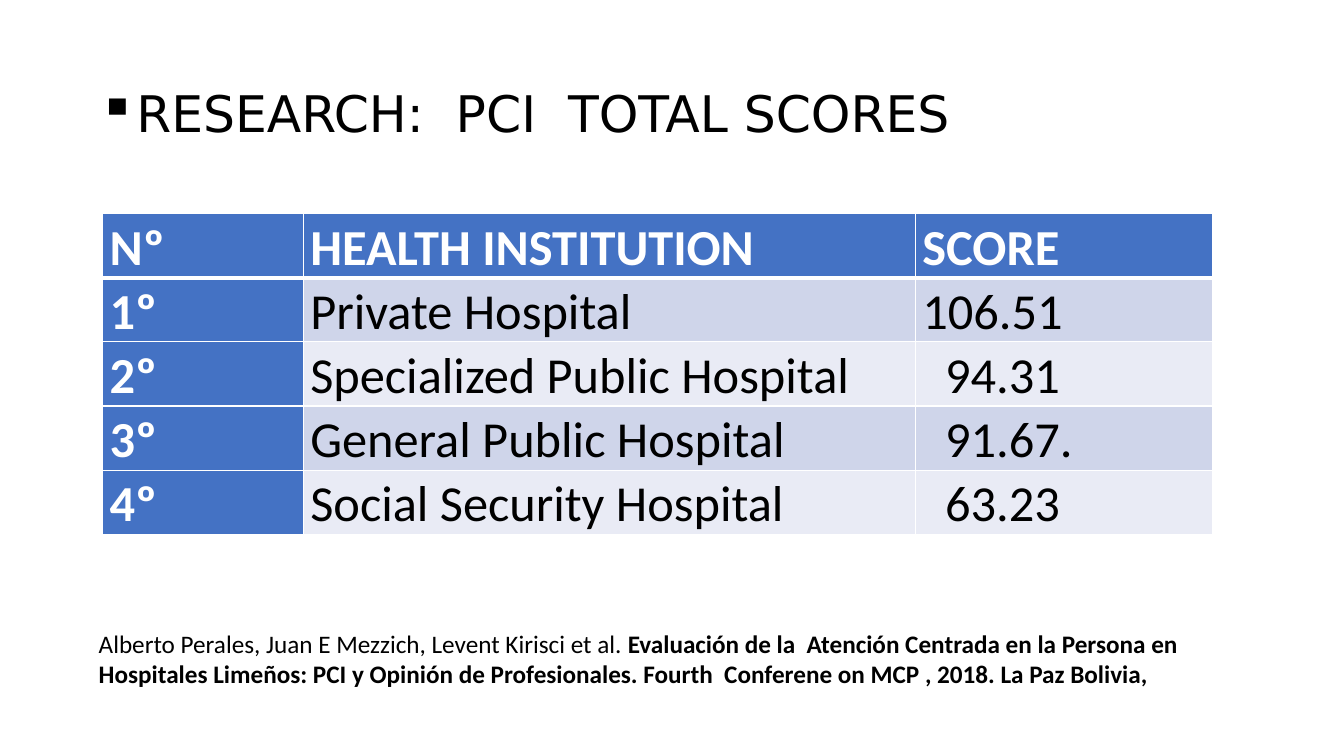
from lxml import etree
from pptx import Presentation
from pptx import util as u
from pptx.dml.color import RGBColor
from pptx.enum import text
from pptx.oxml import ns

COLORS = {
    "ink": "000000",
    "white": "FFFFFF",
    "accent": "4472C4",
    "odd_band": "CFD5EA",
    "even_band": "E9EBF5",
}
SCORES = [
    ("Nº", "HEALTH INSTITUTION", "SCORE"),
    ("1º", "Private Hospital", "106.51"),
    ("2º", "Specialized Public Hospital", "94.31"),
    ("3º", "General Public Hospital", "91.67."),
    ("4º", "Social Security Hospital", "63.23"),
]


def write(paragraph, content, size=36, font="Calibri", color="ink", bold=False,
          bullet=None, left=0, indent=0, spacing=None):
    if left:
        properties = paragraph._p.get_or_add_pPr()
        properties.set("marL", str(u.Pt(left)))
        properties.set("indent", str(u.Pt(indent)))
        if bullet:
            etree.SubElement(properties, ns.qn("a:buChar"), char=bullet)
    if spacing:
        paragraph.line_spacing = spacing
    run = paragraph.add_run()
    run.text = content
    run.font.size = u.Pt(size)
    run.font.name = font
    run.font.bold = bold
    run.font.color.rgb = RGBColor.from_string(COLORS[color])


class ScoreSlide:
    """Builds the score slide from text boxes and a table in one shared style."""

    def __init__(self, deck):
        self.slide = deck.slides.add_slide(deck.slide_layouts[6])
        self.header_rule = 3
        self.grid_rule = 1

    def text_box(self, left, top, width, height):
        frame = self.slide.shapes.add_textbox(
            u.Pt(left), u.Pt(top), u.Pt(width), u.Pt(height)).text_frame
        frame.word_wrap = True
        frame.auto_size = text.MSO_AUTO_SIZE.SHAPE_TO_FIT_TEXT
        return frame.paragraphs[0]

    def borders(self, cell, row):
        widths = {"L": self.grid_rule, "R": self.grid_rule,
                  "T": self.header_rule if row == 1 else self.grid_rule,
                  "B": self.header_rule if row == 0 else self.grid_rule}
        properties = cell._tc.get_or_add_tcPr()
        for place, (side, width) in enumerate(widths.items()):
            line = etree.Element(ns.qn(f"a:ln{side}"), w=str(u.Pt(width)))
            fill = etree.SubElement(line, ns.qn("a:solidFill"))
            etree.SubElement(fill, ns.qn("a:srgbClr"), val=COLORS["white"])
            properties.insert(place, line)

    def table(self, rows, left, top, widths, row_height):
        grid = self.slide.shapes.add_table(
            len(rows), len(widths), u.Pt(left), u.Pt(top),
            u.Pt(sum(widths)), u.Pt(row_height * len(rows))).table
        grid.first_col = True
        for column, width in zip(grid.columns, widths):
            column.width = u.Pt(width)
        for row, values in enumerate(rows):
            grid.rows[row].height = u.Pt(row_height)
            for column, value in enumerate(values):
                self.cell(grid.cell(row, column), row, column, value)

    def cell(self, cell, row, column, value):
        heading = row == 0 or column == 0
        band = "odd_band" if row % 2 else "even_band"
        cell.margin_left = cell.margin_right = u.Pt(5)
        cell.margin_top = cell.margin_bottom = 0
        cell.fill.solid()
        cell.fill.fore_color.rgb = RGBColor.from_string(
            COLORS["accent" if heading else band])
        self.borders(cell, row)
        write(cell.text_frame.paragraphs[0], value, bold=heading,
              color="white" if heading else "ink", spacing=1.06,
              left=16.3 if column == 2 and row > 1 else 0)


def main():
    deck = Presentation()
    deck.slide_width, deck.slide_height = u.Pt(960), u.Pt(540)
    page = ScoreSlide(deck)

    heading = page.text_box(63.4, 55.4, 700, 51)
    write(heading, "RESEARCH:  PCI  TOTAL SCORES", font="DejaVu Sans",
          bullet="▪", left=22.5, indent=-22.5)

    page.table(SCORES, 73.4, 152.6, [143.3, 437.2, 212.6], 45.8)

    citation = page.text_box(63.4, 445, 854, 51)
    write(citation, "Alberto Perales, Juan E Mezzich, Levent Kirisci et al. ", size=18)
    write(citation, "Evaluación de la  Atención Centrada en la Persona en "
          "Hospitales Limeños: PCI y Opinión de Profesionales. "
          "Fourth  Conferene on MCP , 2018. La Paz Bolivia,", size=18, bold=True)

    deck.save("out.pptx")


if __name__ == "__main__":
    main()
